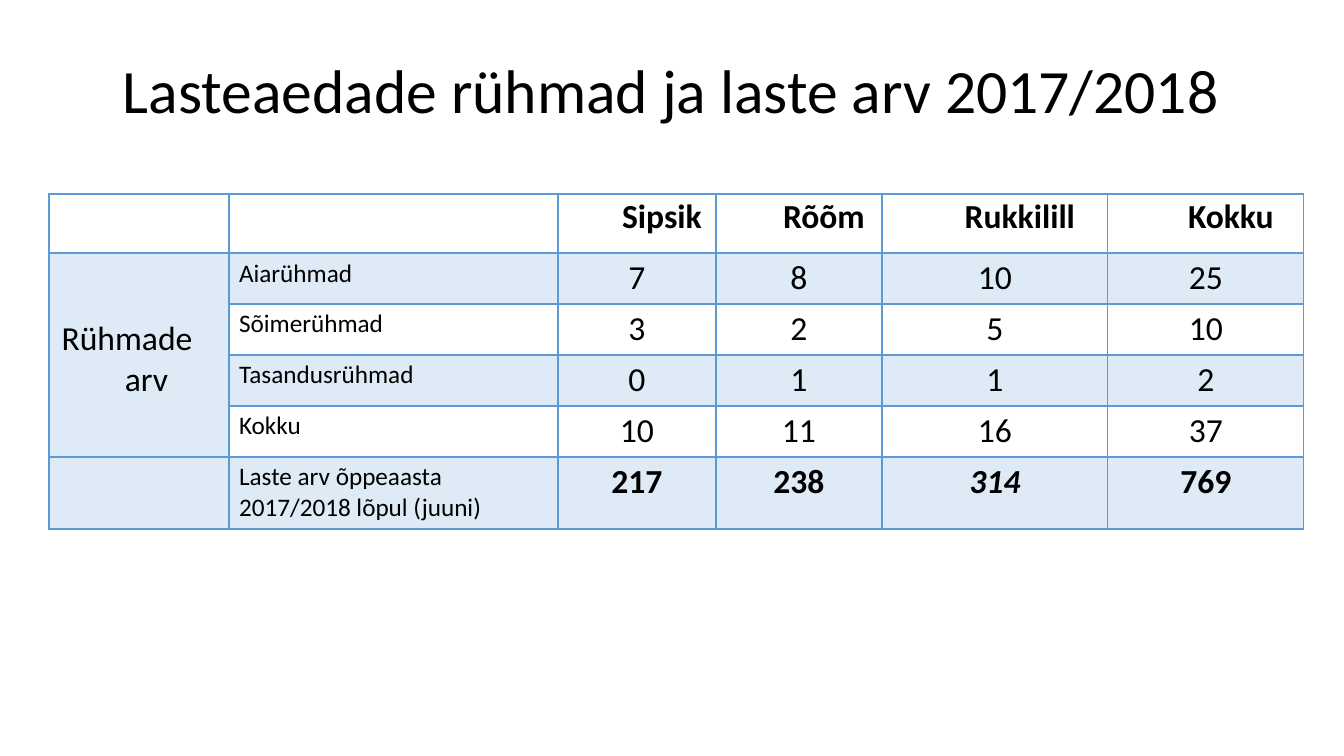
from lxml.etree import SubElement
from pptx import Presentation
from pptx.dml.color import RGBColor
from pptx.enum.text import MSO_ANCHOR as Anchor, PP_ALIGN as Align
from pptx.oxml.ns import qn
from pptx.util import Pt

EMU_PER_PX = 914400 / 100.8
FONT = "Calibri"
BLACK = RGBColor(0x00, 0x00, 0x00)
BLUE = RGBColor(0x5B, 0x9B, 0xD5)

COLUMN_WIDTHS = [180, 329, 158, 166, 226, 196]
ROW_HEIGHTS = [59, 51, 51, 51, 51, 72]
HEADINGS = ["Sipsik", "Rõõm", "Rukkilill", "Kokku"]
ROWS = [
    ("Aiarühmad", [7, 8, 10, 25]),
    ("Sõimerühmad", [3, 2, 5, 10]),
    ("Tasandusrühmad", [0, 1, 1, 2]),
    ("Kokku", [10, 11, 16, 37]),
    ("Laste arv õppeaasta 2017/2018 lõpul (juuni)", [217, 238, 314, 769]),
]
LAST_ROW = len(ROWS)
ITALIC_COLUMN = 4


def px(length):
    return round(length * EMU_PER_PX)


def write(frame, text, size, align=Align.CENTER, bold=False, italic=False):
    para = frame.paragraphs[0]
    para.text = text
    para.alignment = align
    font = para.font
    font.name, font.size = FONT, Pt(size)
    font.bold, font.italic = bold, italic
    font.color.rgb = BLACK
    return para


def indent(para, left, first=0):
    properties = para._p.get_or_add_pPr()
    properties.set("marL", str(px(left)))
    properties.set("indent", str(px(first)))


def add_title(page, text):
    box = page.shapes.add_textbox(px(92), px(40), px(1159), px(107))
    frame = box.text_frame
    frame.word_wrap = True
    frame.vertical_anchor = Anchor.MIDDLE
    write(frame, text, 44).line_spacing = 0.9


def set_borders(cell, top=1, bottom=1):
    properties = cell._tc.get_or_add_tcPr()
    for side, width in (("L", 1), ("R", 1), ("T", top), ("B", bottom)):
        line = SubElement(properties, qn(f"a:ln{side}"), w=str(Pt(width)))
        fill = SubElement(line, qn("a:solidFill"))
        SubElement(fill, qn("a:srgbClr"), val=str(BLUE))


def set_fill(cell, shaded):
    if not shaded:
        cell.fill.background()
        return
    cell.fill.solid()
    cell.fill.fore_color.rgb = BLUE
    color = cell._tc.tcPr.find(qn("a:solidFill"))[0]
    SubElement(color, qn("a:alpha"), val="20000")


def add_grid(page):
    width, height = sum(COLUMN_WIDTHS), sum(ROW_HEIGHTS)
    table = page.shapes.add_table(
        len(ROW_HEIGHTS), len(COLUMN_WIDTHS), px(49), px(194), px(width), px(height)
    ).table
    table.first_row = table.horz_banding = False
    for column, size in zip(table.columns, COLUMN_WIDTHS):
        column.width = px(size)
    for row, size in zip(table.rows, ROW_HEIGHTS):
        row.height = px(size)

    # Odd rows are shaded; a heavier rule separates the headings
    for index, row in enumerate(table.rows):
        for cell in row.cells:
            set_borders(cell, 2 if index == 1 else 1, 2 if index == 0 else 1)
            set_fill(cell, index % 2 == 1)
    return table


def fill_headings(table):
    for column, heading in enumerate(HEADINGS, start=2):
        cell = table.cell(0, column)
        cell.margin_left = cell.margin_right = px(7)
        cell.margin_top = cell.margin_bottom = 0
        para = write(cell.text_frame, heading, 24, bold=True)
        para.line_spacing = 1.07
        indent(para, 50)


def fill_group_label(table):
    cell = table.cell(1, 0)
    cell.merge(table.cell(LAST_ROW - 1, 0))
    cell.margin_left, cell.margin_right, cell.margin_top = 0, px(24), px(66)
    # The hanging indent sets the second line to the right of the first
    indent(write(cell.text_frame, "Rühmade arv", 24), 39, -39)


def fill_counts(table):
    for row, (label, counts) in enumerate(ROWS, start=1):
        write(table.cell(row, 1).text_frame, label, 18, Align.LEFT)
        bold = row == LAST_ROW
        for column, count in enumerate(counts, start=2):
            italic = bold and column == ITALIC_COLUMN
            frame = table.cell(row, column).text_frame
            write(frame, str(count), 24, bold=bold, italic=italic)


def main():
    deck = Presentation()
    deck.slide_width, deck.slide_height = px(1344), px(756)
    page = deck.slides.add_slide(deck.slide_layouts[6])

    # Title
    add_title(page, "Lasteaedade rühmad ja laste arv 2017/2018")

    # Table of groups and children
    table = add_grid(page)
    fill_headings(table)
    fill_group_label(table)
    fill_counts(table)

    deck.save("out.pptx")


if __name__ == "__main__":
    main()
